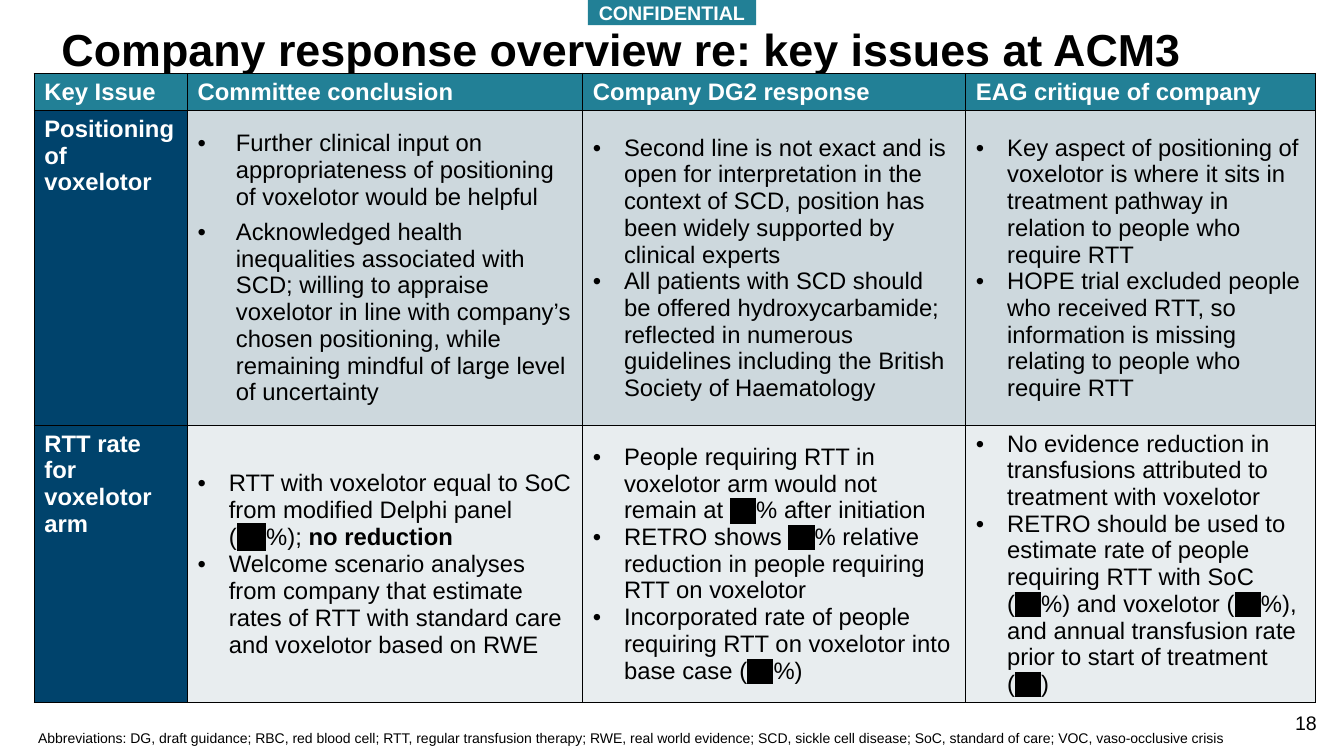
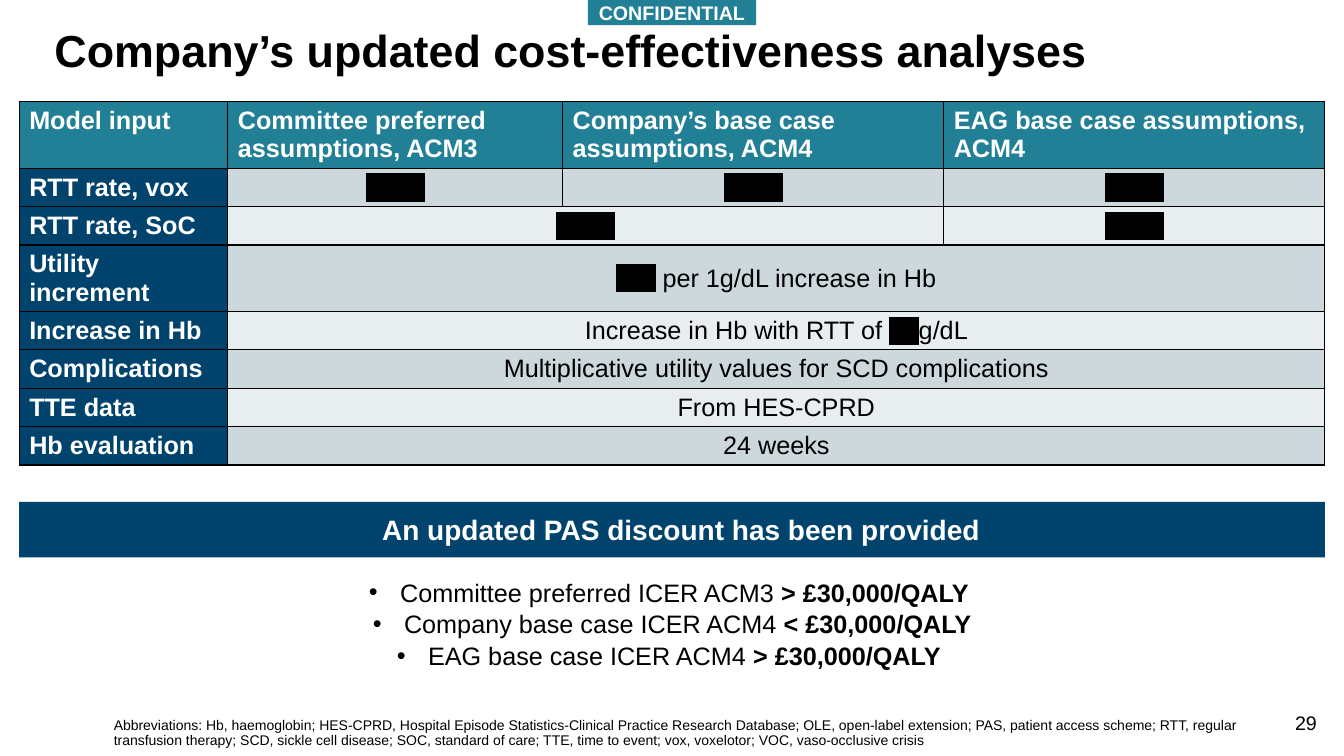
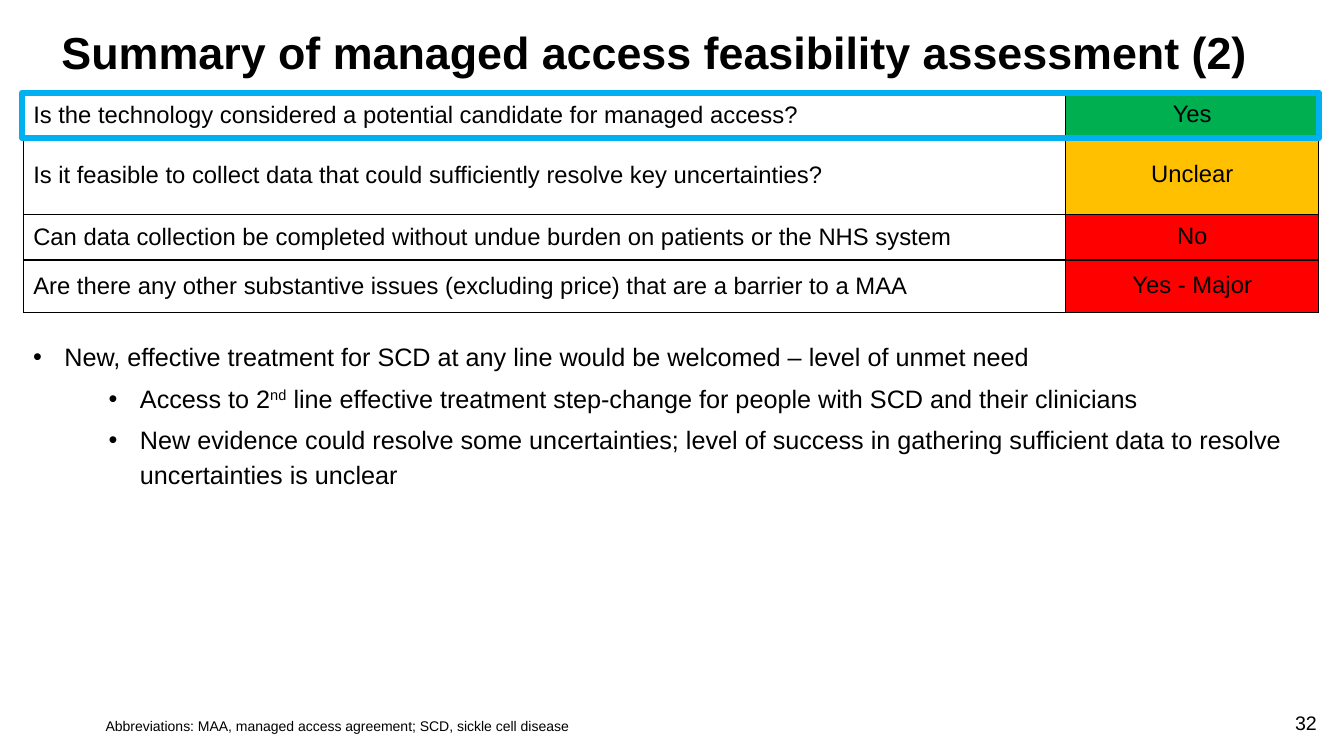
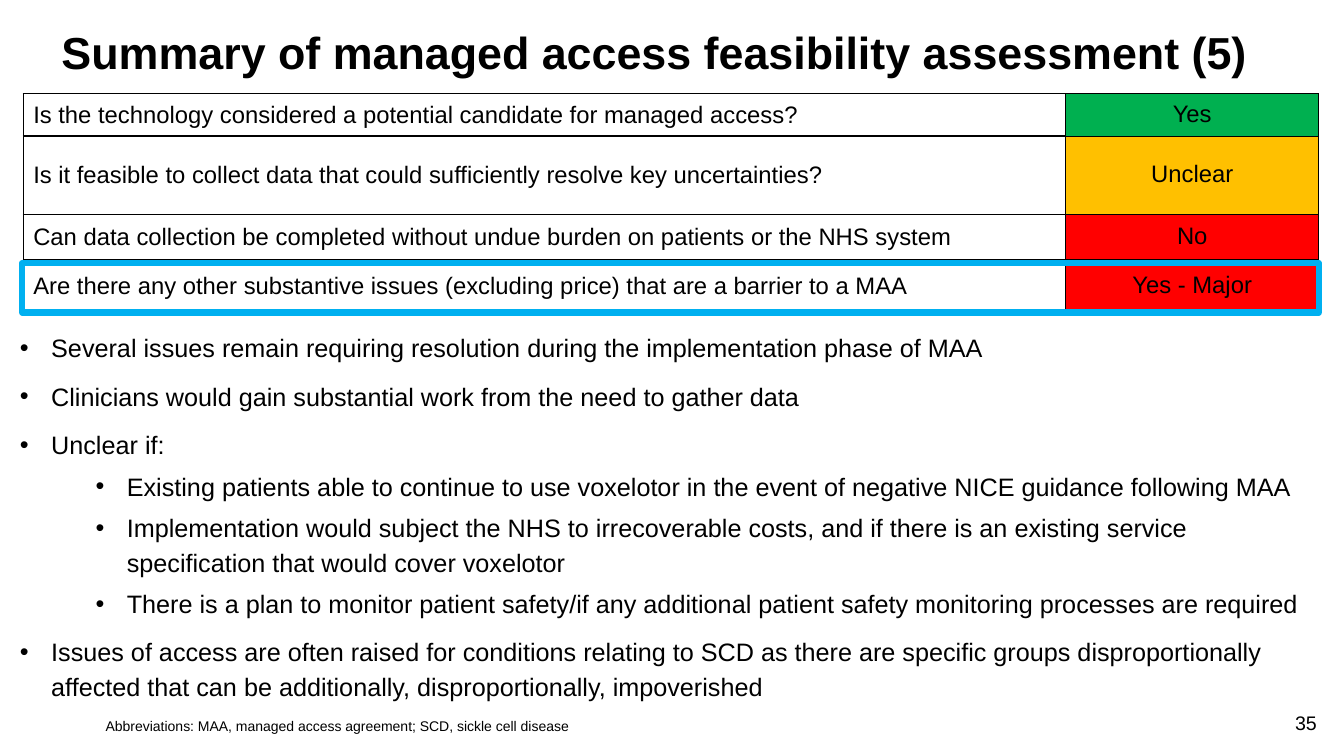
from dataclasses import dataclass
from itertools import takewhile

from lxml import etree
from pptx import Presentation
from pptx.dml.color import RGBColor
from pptx.enum.shapes import MSO_SHAPE
from pptx.enum.text import MSO_ANCHOR, MSO_AUTO_SIZE, PP_ALIGN
from pptx.oxml.ns import qn
from pptx.util import Inches, Pt

RECTANGLE = MSO_SHAPE.RECTANGLE
TOP, MIDDLE = MSO_ANCHOR.TOP, MSO_ANCHOR.MIDDLE
LEFT, CENTER, RIGHT = PP_ALIGN.LEFT, PP_ALIGN.CENTER, PP_ALIGN.RIGHT
NO_AUTOFIT = MSO_AUTO_SIZE.NONE


@dataclass(frozen=True)
class Theme:
    font: str = "Arial"
    black: str = "000000"
    white: str = "FFFFFF"
    teal: str = "228096"
    navy: str = "00436C"
    bands: tuple = ("CDD8DD", "E8EDEF")
    green: str = "00B050"
    amber: str = "FFC000"
    red: str = "FF0000"
    focus: str = "00B0F0"
    title: int = 32
    banner: int = 20
    body: int = 18
    table: int = 17
    redacted: int = 16
    label: int = 14
    note: int = 10
    indent: float = 0.31


theme = Theme()


def write_text(frame, paragraphs, size, color=theme.black, bold=False, align=LEFT,
               line_spacing=None, space_before=0, indent=0, levels=None):
    frame.word_wrap = True
    for index, pieces in enumerate(paragraphs):
        paragraph = frame.add_paragraph() if index else frame.paragraphs[0]
        level = levels[index] if levels else 0
        if indent:
            properties = paragraph._p.get_or_add_pPr()
            properties.set("marL", str(Inches(indent + 0.75 * level)))
            properties.set("indent", str(-Inches(indent)))
            etree.SubElement(properties, qn("a:buFont")).set("typeface", theme.font)
            etree.SubElement(properties, qn("a:buChar")).set("char", "•")
        paragraph.level = level
        paragraph.alignment = align
        paragraph.space_before = Pt(space_before / (level + 1) if index else 0)
        if line_spacing:
            paragraph.line_spacing = line_spacing
        for piece in [pieces] if isinstance(pieces, str) else pieces:
            text, options = (piece, {}) if isinstance(piece, str) else piece
            run = paragraph.add_run()
            run.text = text
            run.font.name = theme.font
            run.font.size = Pt(options.get("size", size))
            run.font.bold = options.get("bold", bold)
            run.font.color.rgb = RGBColor.from_string(color)
            properties = run._r.get_or_add_rPr()
            if options.get("raised"):
                properties.set("baseline", "30000")
            if options.get("redacted"):
                highlight = etree.Element(qn("a:highlight"))
                etree.SubElement(highlight, qn("a:srgbClr")).set("val", theme.black)
                properties.find(qn("a:solidFill")).addnext(highlight)


def format_cell(cell, fill, anchor=MIDDLE, widths=(1, 1, 1, 1)):
    cell.vertical_anchor = anchor
    if fill:
        cell.fill.solid()
        cell.fill.fore_color.rgb = RGBColor.from_string(fill)
    else:
        cell.fill.background()
    properties = cell._tc.get_or_add_tcPr()
    for position, (side, width) in enumerate(zip("LRTB", widths)):
        border = etree.Element(qn(f"a:ln{side}"), w=str(Pt(width)))
        solid = etree.SubElement(border, qn("a:solidFill"))
        etree.SubElement(solid, qn("a:srgbClr")).set("val", theme.black)
        properties.insert(position, border)


presentation = Presentation()
presentation.slide_width = Inches(13.33)
presentation.slide_height = Inches(7.5)

managed_access_note = "Abbreviations: MAA, managed access agreement; SCD, sickle cell disease"
pages = [
    ("Company response overview re: key issues at ACM3", 0.51, 0.19, "18",
     "Abbreviations: DG, draft guidance; RBC, red blood cell; RTT, regular transfusion therapy; "
     "RWE, real world evidence; SCD, sickle cell disease; SoC, standard of care; "
     "VOC, vaso-occlusive crisis", (0.28, 7.21, 13.05, 0.29)),
    ("Company’s updated cost-effectiveness analyses", 0.44, 0.2, "29",
     "Abbreviations: Hb, haemoglobin; HES-CPRD, Hospital Episode Statistics-Clinical Practice "
     "Research Database; OLE, open-label extension; PAS, patient access scheme; RTT, regular "
     "transfusion therapy; SCD, sickle cell disease; SOC, standard of care; TTE, time to event; "
     "vox, voxelotor; VOC, vaso-occlusive crisis", (1.03, 7.08, 11.55, 0.4)),
    ("Summary of managed access feasibility assessment (2)", 0.51, 0.22, "32",
     managed_access_note, (0.95, 7.09, 10.34, 0.4)),
    ("Summary of managed access feasibility assessment (5)", 0.51, 0.22, "35",
     managed_access_note, (0.95, 7.09, 10.34, 0.4)),
]
slides = []
text_boxes = []
for title, left, top, number, note, note_box in pages:
    slide = presentation.slides.add_slide(presentation.slide_layouts[5])
    slides.append(slide)
    heading = slide.shapes.title
    heading.left, heading.top = Inches(left), Inches(top)
    heading.width, heading.height = Inches(12.3), Inches(0.65)
    heading.text_frame.auto_size = NO_AUTOFIT
    heading.text_frame.vertical_anchor = MIDDLE
    write_text(heading.text_frame, [title], theme.title, bold=True, line_spacing=0.9)
    text_boxes += [
        (slide, (12.65, 7, 0.51, 0.4), [number], theme.label, {"align": RIGHT}),
        (slide, note_box, [note], theme.note, {"line_spacing": 0.9}),
    ]
response_slide, analyses_slide, candidate_slide, barrier_slide = slides

strong = {"bold": True}
small_redaction = ("***", {"redacted": True, "size": theme.redacted})
redaction = ("***", {"redacted": True, "size": theme.body})
wide_redaction = [[("******", {"redacted": True})]]

response_rows = [
    ["Key Issue", "Committee conclusion", "Company DG2 response", "EAG critique of company"],
    ["Positioning of voxelotor",
     ["Further clinical input on appropriateness of positioning of voxelotor would be helpful",
      "Acknowledged health inequalities associated with SCD; willing to appraise voxelotor in "
      "line with company’s chosen positioning, while remaining mindful of large level of "
      "uncertainty"],
     ["Second line is not exact and is open for interpretation in the context of SCD, position "
      "has been widely supported by clinical experts",
      "All patients with SCD should be offered hydroxycarbamide; reflected in numerous "
      "guidelines including the British Society of Haematology"],
     ["Key aspect of positioning of voxelotor is where it sits in treatment pathway in relation "
      "to people who require RTT",
      "HOPE trial excluded people who received RTT, so information is missing relating to "
      "people who require RTT"]],
    ["RTT rate for voxelotor arm",
     [["RTT with voxelotor equal to SoC from modified Delphi panel (", redaction, "%); ",
       ("no reduction", strong)],
      "Welcome scenario analyses from company that estimate rates of RTT with standard care "
      "and voxelotor based on RWE"],
     [["People requiring RTT in voxelotor arm would not remain at ", small_redaction,
       "% after initiation"],
      ["RETRO shows ", small_redaction,
       "% relative reduction in people requiring RTT on voxelotor"],
      ["Incorporated rate of people requiring RTT on voxelotor into base case (",
       small_redaction, "%)"]],
     ["No evidence reduction in transfusions attributed to treatment with voxelotor",
      ["RETRO should be used to estimate rate of people requiring RTT with SoC (",
       small_redaction, "%) and voxelotor (", small_redaction,
       "%), and annual transfusion rate prior to start of treatment (", small_redaction, ")"]]],
]
analyses_rows = [
    ["Model input", "Committee preferred assumptions, ACM3",
     "Company’s base case assumptions, ACM4", "EAG base case assumptions, ACM4"],
    ["RTT rate, vox", wide_redaction, wide_redaction, wide_redaction],
    ["RTT rate, SoC", wide_redaction, None, wide_redaction],
    ["Utility increment",
     [[("****", {"redacted": True}), " per 1g/dL increase in Hb"]], None, None],
    ["Increase in Hb", [["Increase in Hb with RTT of ", redaction, "g/dL"]], None, None],
    ["Complications", ["Multiplicative utility values for SCD complications"], None, None],
    ["TTE data", ["From HES-CPRD"], None, None],
    ["Hb evaluation", ["24 weeks"], None, None],
]
tables = [
    (response_slide, 0.34, 0.73, (1.52, 3.92, 3.8, 3.47), (0.37, 3.12, 2.75), response_rows,
     theme.table, {"indent": theme.indent}, {(1, 1): {"indent": 0.38, "space_before": 6}}),
    (analyses_slide, 0.19, 1.01, (2.07, 3.32, 3.78, 3.78),
     (0.66, 0.38, 0.38, 0.66, 0.38, 0.38, 0.38, 0.38), analyses_rows,
     theme.body, {"align": CENTER}, {}),
]
for slide, left, top, widths, heights, rows, size, body_style, exceptions in tables:
    table = slide.shapes.add_table(len(rows), len(widths), Inches(left), Inches(top),
                                   Inches(sum(widths)), Inches(sum(heights))).table
    for column, width in zip(table.columns, widths):
        column.width = Inches(width)
    for row_index, row in enumerate(rows):
        table.rows[row_index].height = Inches(heights[row_index])
        for column_index, content in enumerate(row):
            cell = table.cell(row_index, column_index)
            is_heading = row_index == 0 or column_index == 0
            if row_index == 0:
                fill = theme.teal
            elif column_index == 0:
                fill = theme.navy
            else:
                fill = theme.bands[(row_index - 1) % 2]
            format_cell(cell, fill, TOP if is_heading else MIDDLE)
            if content is None:
                continue
            span = len(list(takewhile(lambda value: value is None, row[column_index + 1:])))
            if span:
                cell.merge(table.cell(row_index, column_index + span))
            if is_heading:
                write_text(cell.text_frame, [content], size, theme.white, bold=True)
            else:
                style = exceptions.get((row_index, column_index), body_style)
                write_text(cell.text_frame, content, size, **style)

questions = [
    ("Is the technology considered a potential candidate for managed access?",
     "Yes", theme.green, 0.42, (1, 0.5, 0.5, 0.5)),
    ("Is it feasible to collect data that could sufficiently resolve key uncertainties?",
     "Unclear", theme.amber, 0.78, (1, 0.5, 0.5, 0.5)),
    ("Can data collection be completed without undue burden on patients or the NHS system",
     "No", theme.red, 0.45, (1, 0.5, 0.5, 1)),
    ("Are there any other substantive issues (excluding price) that are a barrier to a MAA",
     "Yes - Major", theme.red, 0.52, (1, 1, 1, 1)),
]
for slide in (candidate_slide, barrier_slide):
    table = slide.shapes.add_table(len(questions), 2, Inches(0.23), Inches(0.93),
                                   Inches(12.85), Inches(2.17)).table
    table.first_row = table.horz_banding = False
    table.columns[0].width, table.columns[1].width = Inches(10.34), Inches(2.51)
    for row_index, (question, answer, fill, height, borders) in enumerate(questions):
        table.rows[row_index].height = Inches(height)
        question_cell, answer_cell = table.rows[row_index].cells
        format_cell(question_cell, None)
        write_text(question_cell.text_frame, [question], theme.table)
        format_cell(answer_cell, fill, widths=borders)
        answer_cell.margin_left = answer_cell.margin_right = answer_cell.margin_top = 0
        answer_cell.margin_bottom = Inches(0.02)
        write_text(answer_cell.text_frame, [answer], theme.table, align=CENTER)

confidential = ((5.83, 0, 1.67, 0.25), theme.teal, "CONFIDENTIAL", theme.label, 0.1)
rectangles = [
    (response_slide, *confidential),
    (analyses_slide, *confidential),
    (analyses_slide, (0.19, 4.98, 12.95, 0.55), theme.navy,
     "An updated PAS discount has been provided", theme.banner, 0.28),
    (candidate_slide, (0.22, 0.92, 12.86, 0.45), None, None, None, None),
    (barrier_slide, (0.22, 2.61, 12.86, 0.49), None, None, None, None),
]
for slide, box, fill, text, size, margin in rectangles:
    shape = slide.shapes.add_shape(RECTANGLE, *map(Inches, box))
    shape.shadow.inherit = False
    if fill:
        shape.fill.solid()
        shape.fill.fore_color.rgb = RGBColor.from_string(fill)
        shape.line.fill.background()
        shape.text_frame.margin_left = Inches(margin)
        shape.text_frame.vertical_anchor = MIDDLE
        write_text(shape.text_frame, [text], size, theme.white, bold=True, align=CENTER)
    else:
        shape.fill.background()
        shape.line.color.rgb = RGBColor.from_string(theme.focus)
        shape.line.width = Pt(4.5)

outline = {"indent": theme.indent, "line_spacing": 1.14, "space_before": 10}
text_boxes += [
    (analyses_slide, (0.19, 5.66, 12.95, 1.01),
     [["Committee preferred ICER ACM3 ", ("> £30,000/QALY ", strong)],
      ["Company base case ICER ACM4 ", ("< £30,000/QALY", strong)],
      ["EAG base case ICER ACM4 ", ("> £30,000/QALY ", strong)]],
     theme.body, {"indent": theme.indent, "align": CENTER, "line_spacing": 1.05}),
    (candidate_slide, (0.23, 3.3, 12.85, 3.7),
     ["New, effective treatment for SCD at any line would be welcomed – level of unmet need",
      ["Access to 2", ("nd", {"raised": True}),
       " line effective treatment step-change for people with SCD and their clinicians"],
      "New evidence could resolve some uncertainties; level of success in gathering sufficient "
      "data to resolve uncertainties is unclear"],
     theme.body, {**outline, "levels": (0, 1, 1)}),
    (barrier_slide, (0.1, 3.21, 13.1, 4.04),
     ["Several issues remain requiring resolution during the implementation phase of MAA",
      "Clinicians would gain substantial work from the need to gather data",
      "Unclear if:",
      "Existing patients able to continue to use voxelotor in the event of negative NICE "
      "guidance following MAA",
      "Implementation would subject the NHS to irrecoverable costs, and if there is an existing "
      "service specification that would cover voxelotor",
      "There is a plan to monitor patient safety/if any additional patient safety monitoring "
      "processes are required",
      "Issues of access are often raised for conditions relating to SCD as there are specific "
      "groups disproportionally affected that can be additionally, disproportionally, "
      "impoverished"],
     theme.body, {**outline, "levels": (0, 0, 0, 1, 1, 1, 0)}),
]
for slide, box, paragraphs, size, style in text_boxes:
    text_box = slide.shapes.add_textbox(*map(Inches, box))
    write_text(text_box.text_frame, paragraphs, size, **style)

presentation.save("out.pptx")
